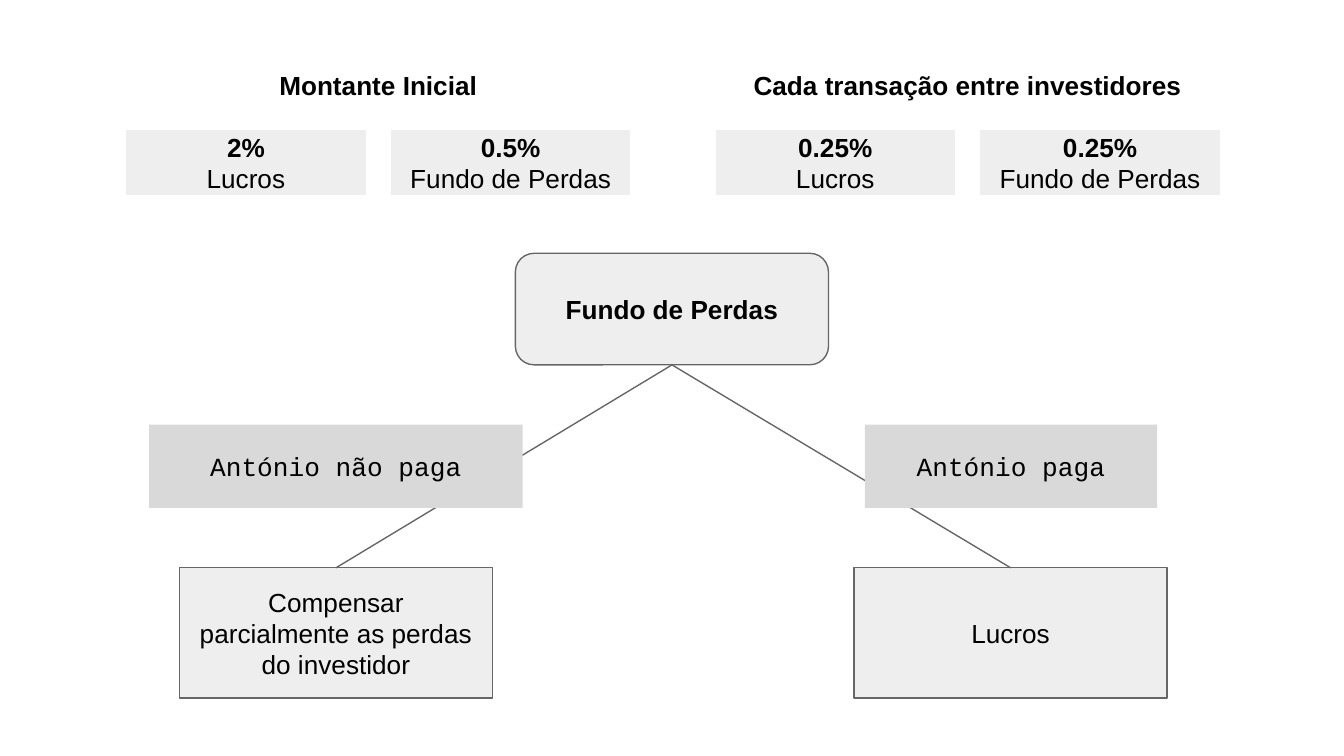
"""Build a slide showing the fees and how the loss fund is used."""
from lxml.etree import SubElement
from pptx import Presentation
from pptx.dml.color import RGBColor
from pptx.enum.shapes import MSO_CONNECTOR, MSO_SHAPE
from pptx.enum.text import MSO_ANCHOR, PP_ALIGN
from pptx.oxml.ns import qn
from pptx.util import Pt

PX = 4572
COLORS = {"box": "EEEEEE", "label": "D9D9D9", "line": "666666",
          "white": "FFFFFF", "text": "000000"}


def rgb(name):
    return RGBColor.from_string(COLORS[name])


def write(p, text, font="Arial", size=14, bold=False, color="text"):
    p.alignment = PP_ALIGN.CENTER
    r = p.add_run()
    r.text = text
    r.font.name = font
    r.font.size = Pt(size)
    r.font.bold = bold
    r.font.color.rgb = rgb(color)


class Deck:
    def __init__(self, width, height):
        self.prs = Presentation()
        self.prs.slide_width = width * PX
        self.prs.slide_height = height * PX
        self.s = self.prs.slides.add_slide(self.prs.slide_layouts[6])

    def box(self, x, y, w, h, lines, fill=None, line=None, shapes=None,
            kind=MSO_SHAPE.RECTANGLE, font="Arial"):
        shapes = shapes or self.s.shapes
        sp = shapes.add_shape(kind, x * PX, y * PX, w * PX, h * PX)
        sp.shadow.inherit = False
        if fill:
            sp.fill.solid()
            sp.fill.fore_color.rgb = rgb(fill)
        else:
            sp.fill.background()
        if line:
            sp.line.color.rgb = rgb(line)
            sp.line.width = Pt(0.75)
        else:
            sp.line.fill.background()
        tf = sp.text_frame
        tf.word_wrap = True
        tf.vertical_anchor = MSO_ANCHOR.MIDDLE
        tf.margin_left = tf.margin_right = 20 * PX
        tf.margin_top = tf.margin_bottom = 20 * PX
        for i, (text, bold) in enumerate(lines):
            p = tf.add_paragraph() if i else tf.paragraphs[0]
            write(p, text, font=font, bold=bold)
        return sp

    def fees(self, x, heading, rates):
        shapes = self.s.shapes.add_group_shape().shapes
        for i, (rate, name) in enumerate(rates):
            self.box(x + i * 394, 193, 358, 98, [(rate, True), (name, False)],
                     fill="box", line="white", shapes=shapes)
        self.box(x, 77, 752, 98, [(heading, True)], line="white",
                 shapes=shapes)

    def branch(self, start, end):
        c = self.s.shapes.add_connector(MSO_CONNECTOR.STRAIGHT, 0, 0, 0, 0)
        c.begin_connect(start, 2)
        c.end_connect(end, 0)
        c.line.color.rgb = rgb("line")
        c.line.width = Pt(0.75)
        SubElement(c._element.spPr, qn("a:effectLst"))


def main():
    deck = Deck(2000, 1125)
    fund = deck.box(767, 377, 466, 166, [("Fundo de Perdas", True)],
                    fill="box", line="line",
                    kind=MSO_SHAPE.ROUNDED_RECTANGLE)
    outcomes = [(267, "Compensar parcialmente as perdas do investidor"),
                (1271, "Lucros")]
    for x, text in outcomes:
        outcome = deck.box(x, 845, 466, 194, [(text, False)],
                           fill="box", line="line")
        deck.branch(fund, outcome)
    for x, w, text in [(222, 556, "António não paga"),
                       (1287, 435, "António paga")]:
        deck.box(x, 632, w, 124, [(text, False)], fill="label",
                 font="Courier New")
    deck.fees(187, "Montante Inicial",
              [("2%", "Lucros"), ("0.5%", "Fundo de Perdas")])
    deck.fees(1064, "Cada transação entre investidores",
              [("0.25%", "Lucros"), ("0.25%", "Fundo de Perdas")])
    deck.prs.save("out.pptx")


if __name__ == "__main__":
    main()
